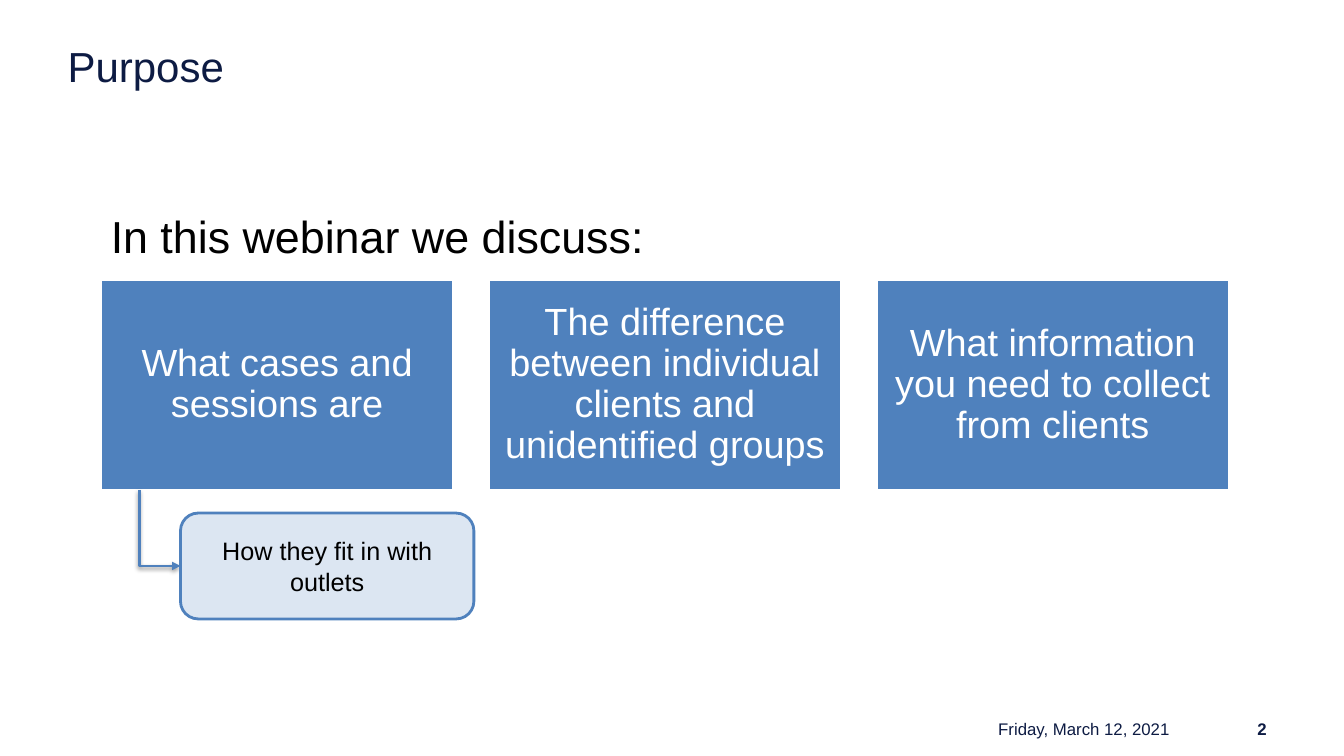
from lxml import etree
from pptx import Presentation
from pptx.dml.color import RGBColor
from pptx.enum.shapes import MSO_CONNECTOR, MSO_SHAPE
from pptx.enum.text import MSO_ANCHOR, PP_ALIGN
from pptx.oxml import parse_xml
from pptx.oxml.ns import nsdecls, qn
from pptx.util import Inches, Pt

RECT, ROUND = MSO_SHAPE.RECTANGLE, MSO_SHAPE.ROUNDED_RECTANGLE
ELBOW = MSO_CONNECTOR.ELBOW
LEFT, CENTER, RIGHT = PP_ALIGN.LEFT, PP_ALIGN.CENTER, PP_ALIGN.RIGHT
TOP, MIDDLE = MSO_ANCHOR.TOP, MSO_ANCHOR.MIDDLE
NAVY, BLUE, PALE, WHITE, BLACK = "0D1B43", "4F81BD", "DCE6F2", "FFFFFF", "000000"
TOPICS = [
    "What cases and sessions are",
    "The difference between individual clients and unidentified groups",
    "What information you need to collect from clients",
]


def rgb(value):
    return RGBColor.from_string(value)


def write(sp, text, size, color, align=LEFT, anchor=MIDDLE, inset=None, bold=False):
    tf = sp.text_frame
    tf.text = text
    tf.word_wrap = True
    tf.vertical_anchor = anchor
    if inset is not None:
        tf.margin_left = tf.margin_right = Inches(inset)
        tf.margin_top = tf.margin_bottom = Inches(inset)
    p = tf.paragraphs[0]
    p.alignment = align
    font = p.runs[0].font
    font.name, font.size, font.bold = "Arial", Pt(size), bold
    font.color.rgb = rgb(color)
    return p


def add_text(s, box, text, size, color, **style):
    sp = s.shapes.add_textbox(*map(Inches, box))
    write(sp, text, size, color, **style)


def add_box(s, kind, box, fill, line):
    sp = s.shapes.add_shape(kind, *map(Inches, box))
    sp.shadow.inherit = False
    sp.fill.solid()
    sp.fill.fore_color.rgb = rgb(fill)
    sp.line.color.rgb = rgb(line)
    sp.line.width = Pt(2)
    return sp


def add_title(s, box, text):
    sp = s.shapes.title
    sp.left, sp.top, sp.width, sp.height = map(Inches, box)
    write(sp, text, 30, NAVY, anchor=TOP, inset=0)


def add_topics(s, box, topics, gap):
    x, y, w, h = box
    card_w = (w - gap * (len(topics) - 1)) / len(topics)
    for i, topic in enumerate(topics):
        sp = add_box(s, RECT, (x + i * (card_w + gap), y, card_w, h), BLUE, WHITE)
        p = write(sp, topic, 27, WHITE, align=CENTER, inset=0.11)
        p.line_spacing = 0.9


def add_elbow(s, start, end):
    (x1, y1), (x2, y2) = start, end
    cx, cy = (x1 + x2) / 2, (y1 + y2) / 2
    w, h = y2 - y1, x2 - x1
    corners = (cx - w / 2, cy - h / 2, cx + w / 2, cy + h / 2)
    line = s.shapes.add_connector(ELBOW, *map(Inches, corners))
    line.line.color.rgb = rgb(BLUE)
    line.line.width = Pt(2)
    sp_pr = line._element.spPr
    xfrm = sp_pr.find(qn("a:xfrm"))
    xfrm.set("rot", "16200000")
    xfrm.set("flipH", "1")
    sp_pr.find(qn("a:prstGeom")).set("prst", "bentConnector2")
    etree.SubElement(sp_pr.find(qn("a:ln")), qn("a:tailEnd"), type="triangle")
    sp_pr.append(parse_xml(
        f'<a:effectLst {nsdecls("a")}>'
        '<a:outerShdw blurRad="40000" dist="20000" dir="5400000" rotWithShape="0">'
        f'<a:srgbClr val="{BLACK}"><a:alpha val="38000"/></a:srgbClr>'
        '</a:outerShdw></a:effectLst>'))


def add_detail(s, box, text, start):
    x, y, w, h = box
    add_elbow(s, start, (x, y + h / 2))
    sp = add_box(s, ROUND, box, PALE, BLUE)
    write(sp, text, 18, BLACK, align=CENTER)


def add_footer(s, box, date, number):
    x, y, w, h = box
    number_w = 1.09
    add_text(s, (x, y, 3.11, h), date, 12, NAVY, align=RIGHT)
    add_text(s, (x + w - number_w, y, number_w, h), number, 12, NAVY,
             align=RIGHT, bold=True)


def main():
    prs = Presentation()
    prs.slide_width, prs.slide_height = Inches(13.33), Inches(7.5)
    s = prs.slides.add_slide(prs.slide_layouts[5])
    add_title(s, (0.67, 0.4, 12, 0.66), "Purpose")
    add_footer(s, (8.59, 7.12, 4.07, 0.23), "Friday, March 12, 2021", "2")
    add_topics(s, (1, 2.77, 11.19, 2.1), TOPICS, 0.35)
    add_text(s, (1, 2.02, 7.11, 0.64), "In this webinar we discuss:", 32, BLACK,
             anchor=TOP)
    add_detail(s, (1.79, 5.09, 2.91, 1.05), "How they fit in with outlets",
               (1.38, 4.86))
    prs.save("out.pptx")


if __name__ == "__main__":
    main()
